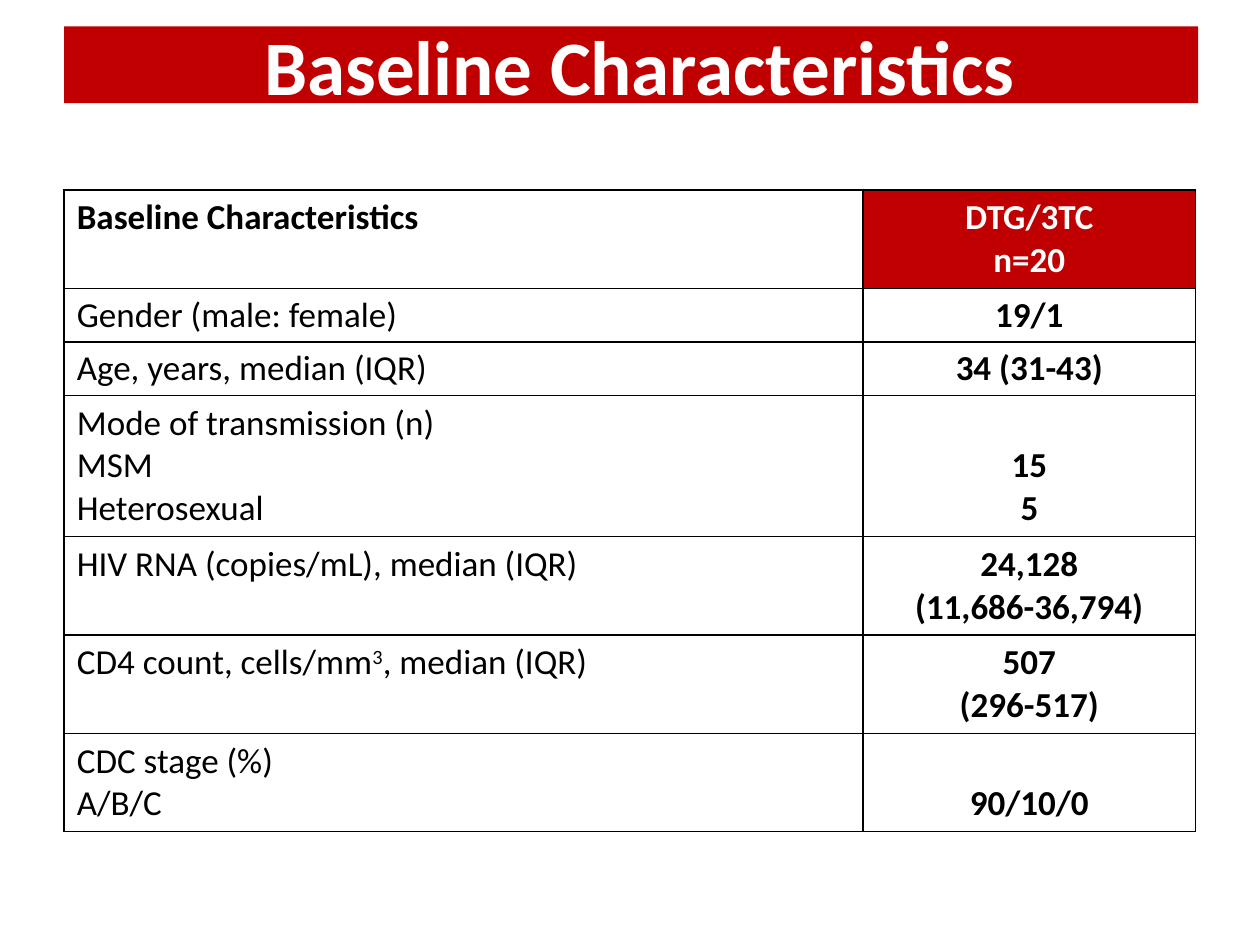
from lxml import etree
from pptx import Presentation, util as u
from pptx.dml.color import RGBColor
from pptx.enum import shapes, text
from pptx.oxml.ns import qn

RED = RGBColor(0xC0, 0x00, 0x00)
WHITE = RGBColor(0xFF, 0xFF, 0xFF)
BLACK = RGBColor(0x00, 0x00, 0x00)
LEFT, CENTER = text.PP_ALIGN.LEFT, text.PP_ALIGN.CENTER
TOP, MIDDLE, BOTTOM = (text.MSO_ANCHOR.TOP, text.MSO_ANCHOR.MIDDLE,
                       text.MSO_ANCHOR.BOTTOM)


def write(frame, content, size=20, color=BLACK, bold=False, align=LEFT, spacing=1.0):
    """Write one paragraph per line; text between ^ marks is superscript."""
    for i, line in enumerate(content.split("\n")):
        paragraph = frame.paragraphs[0] if i == 0 else frame.add_paragraph()
        paragraph.alignment = align
        paragraph.line_spacing = spacing
        for j, part in enumerate(line.split("^")):
            run = paragraph.add_run()
            run.text = part
            run.font.name = "Calibri"
            run.font.size = u.Pt(size)
            run.font.bold = bold
            run.font.color.rgb = color
            if j % 2:
                run.font._element.set("baseline", "30000")


def outline(cell):
    """Draw a 1 pt black line on all four sides of a cell."""
    for side in ("a:lnL", "a:lnR", "a:lnT", "a:lnB"):
        line = etree.SubElement(cell._tc.get_or_add_tcPr(), qn(side), w=str(u.Pt(1)))
        fill = etree.SubElement(line, qn("a:solidFill"))
        etree.SubElement(fill, qn("a:srgbClr"), val=str(BLACK))


deck = Presentation()
deck.slide_width, deck.slide_height = u.Inches(10), u.Inches(7.5)
slide = deck.slides.add_slide(deck.slide_layouts[6])
margin = u.Inches(0.51)

# Title banner
banner = slide.shapes.add_shape(shapes.MSO_SHAPE.RECTANGLE, margin, u.Inches(0.21),
                                u.Inches(9), u.Inches(0.61))
banner.shadow.inherit = False
banner.fill.solid()
banner.fill.fore_color.rgb = RED
banner.line.fill.background()
banner.text_frame.word_wrap = True
banner.text_frame.vertical_anchor = MIDDLE
banner.text_frame.margin_left = u.Inches(0.24)
write(banner.text_frame, "Baseline Characteristics", size=44, color=WHITE,
      bold=True, align=CENTER)

# Table content: label, value, row height, line spacing, anchor of the value
characteristics = [
    ("Baseline Characteristics", "DTG/3TC\nn=20", 0.78, 1.0, TOP),
    ("Gender (male: female)", "19/1", 0.42, 0.95, TOP),
    ("Age, years, median (IQR)", "34 (31-43)", 0.42, 0.95, TOP),
    ("Mode of transmission (n)\nMSM\nHeterosexual", "15\n5", 1.12, 1.0, BOTTOM),
    ("HIV RNA (copies/mL), median (IQR)", "24,128\n(11,686-36,794)", 0.78, 1.0, TOP),
    ("CD4 count, cells/mm^3^, median (IQR)", "507\n(296-517)", 0.78, 1.0, TOP),
    ("CDC stage (%)\nA/B/C", "90/10/0", 0.78, 1.0, BOTTOM),
]
column_widths = (6.34, 2.64)
total_height = sum(row[2] for row in characteristics)

# Characteristics table
table = slide.shapes.add_table(len(characteristics), len(column_widths), margin,
                               u.Inches(1.51), u.Inches(sum(column_widths)),
                               u.Inches(total_height)).table
table.first_row = table.horz_banding = False
for column, width in zip(table.columns, column_widths):
    column.width = u.Inches(width)

for r, (label, value, height, spacing, anchor) in enumerate(characteristics):
    table.rows[r].height = u.Inches(height)
    label_cell, value_cell = table.cell(r, 0), table.cell(r, 1)
    header = r == 0
    for cell in (label_cell, value_cell):
        outline(cell)
        cell.fill.background()
    if header:
        value_cell.fill.solid()
        value_cell.fill.fore_color.rgb = RED
    value_cell.vertical_anchor = anchor
    write(label_cell.text_frame, label, bold=header, spacing=spacing)
    write(value_cell.text_frame, value, bold=True, align=CENTER, spacing=spacing,
          color=WHITE if header else BLACK)

deck.save("out.pptx")
